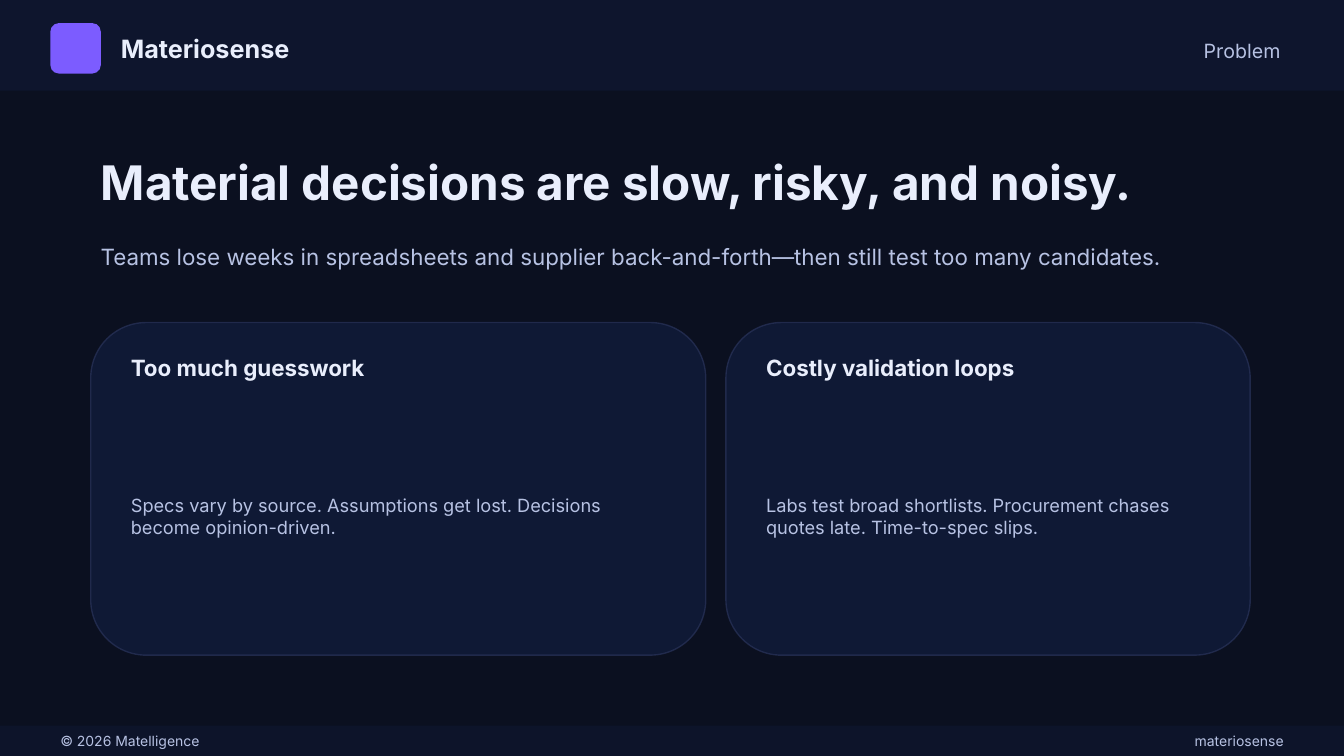
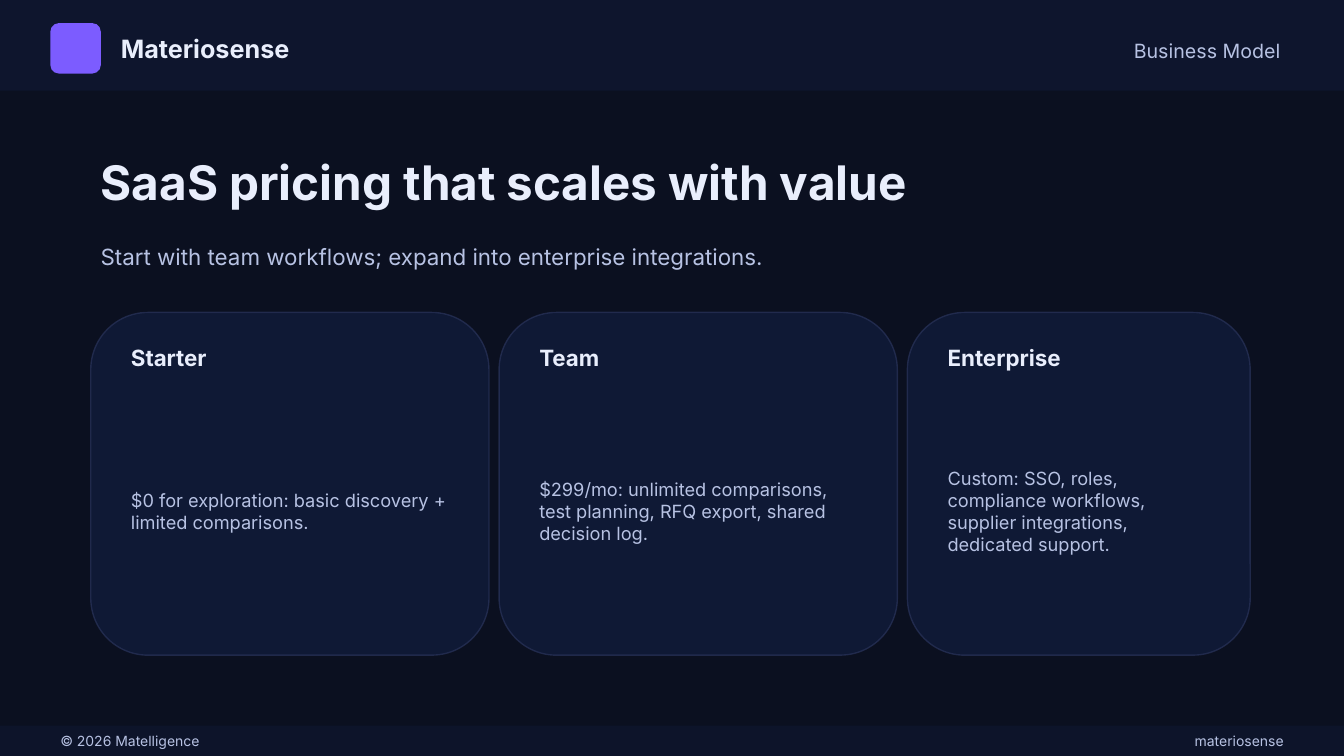
from dataclasses import dataclass

from pptx import Presentation
from pptx import util as u
from pptx.dml.color import RGBColor
from pptx.enum import shapes, text
from pptx.oxml import ns, xmlchemy

PX = u.Inches(0.01)
SLIDE_W, SLIDE_H = 1333, 750
HEADER_H, FOOTER_H = 90, 30
MARGIN = 90
CARD_BOTTOM, CARD_PAD = 650, 30
BRAND = "Materiosense"
TITLE_ONLY = 5

LEFT, RIGHT = text.PP_ALIGN.LEFT, text.PP_ALIGN.RIGHT
RECT = shapes.MSO_SHAPE.RECTANGLE
ROUNDED = shapes.MSO_SHAPE.ROUNDED_RECTANGLE


@dataclass(frozen=True)
class TextStyle:
    size: int
    color: str
    bold: bool = False


@dataclass(frozen=True)
class Theme:
    font: str = "Inter"
    background: str = "0B1020"
    band: str = "0F1730"
    badge: str = "7C5CFF"
    card: str = "101A38"
    card_edge: str = "2A345B"
    title: TextStyle = TextStyle(34, "E9EEFC", True)
    brand: TextStyle = TextStyle(18, "E9EEFC", True)
    section: TextStyle = TextStyle(14, "B7C2E3")
    lead: TextStyle = TextStyle(16, "B7C2E3")
    card_heading: TextStyle = TextStyle(16, "E9EEFC", True)
    card_body: TextStyle = TextStyle(13, "B7C2E3")
    footer: TextStyle = TextStyle(10, "B7C2E3")


THEME = Theme()


@dataclass(frozen=True)
class Box:
    left: int
    top: int
    width: int
    height: int

    def emu(self) -> tuple[int, ...]:
        return tuple(side * PX for side in (self.left, self.top, self.width, self.height))


@dataclass(frozen=True)
class Card:
    heading: str
    body: str
    width: int


@dataclass(frozen=True)
class Page:
    section: str
    title: str
    lead: str
    cards: tuple[Card, ...]
    cards_top: int
    gap: int


PAGES = (
    Page(
        "Problem",
        "Material decisions are slow, risky, and noisy.",
        "Teams lose weeks in spreadsheets and supplier back-and-forth—then still test "
        "too many candidates.",
        (
            Card("Too much guesswork",
                 "Specs vary by source. Assumptions get lost. Decisions become "
                 "opinion-driven.", 610),
            Card("Costly validation loops",
                 "Labs test broad shortlists. Procurement chases quotes late. "
                 "Time-to-spec slips.", 520),
        ),
        cards_top=320,
        gap=20,
    ),
    Page(
        "Business Model",
        "SaaS pricing that scales with value",
        "Start with team workflows; expand into enterprise integrations.",
        (
            Card("Starter",
                 "$0 for exploration: basic discovery + limited comparisons.", 395),
            Card("Team",
                 "$299/mo: unlimited comparisons, test planning, RFQ export, shared "
                 "decision log.", 395),
            Card("Enterprise",
                 "Custom: SSO, roles, compliance workflows, supplier integrations, "
                 "dedicated support.", 340),
        ),
        cards_top=310,
        gap=10,
    ),
)


def set_opacity(colored, percent: int) -> None:
    """Make the first solid colour inside an XML element partly transparent."""
    color = next(colored.iter(ns.qn("a:srgbClr")))
    alpha = xmlchemy.OxmlElement("a:alpha")
    alpha.set("val", str(percent * 1000))
    color.append(alpha)


def add_panel(slide, kind, box: Box, color: str, opacity: int = 100):
    """Add a filled shape without an outline or a shadow."""
    panel = slide.shapes.add_shape(kind, *box.emu())
    panel.shadow.inherit = False
    panel.fill.solid()
    panel.fill.fore_color.rgb = RGBColor.from_string(color)
    panel.line.fill.background()
    if opacity < 100:
        set_opacity(panel.element.spPr, opacity)
    return panel


def write(frame, words: str, style: TextStyle, align=LEFT) -> None:
    frame.text = words
    frame.word_wrap = True
    frame.auto_size = text.MSO_AUTO_SIZE.NONE
    frame.vertical_anchor = text.MSO_ANCHOR.MIDDLE
    paragraph = frame.paragraphs[0]
    paragraph.alignment = align
    font = paragraph.runs[0].font
    font.name = THEME.font
    font.size = u.Pt(style.size)
    font.bold = style.bold
    font.color.rgb = RGBColor.from_string(style.color)


def add_text(slide, box: Box, words: str, style: TextStyle, align=LEFT) -> None:
    write(slide.shapes.add_textbox(*box.emu()).text_frame, words, style, align)


def add_header(slide, section: str) -> None:
    add_panel(slide, RECT, Box(0, 0, SLIDE_W, HEADER_H), THEME.band, 85)
    add_panel(slide, ROUNDED, Box(50, 23, 50, 50), THEME.badge)
    add_text(slide, Box(110, 28, 600, 40), BRAND, THEME.brand)
    add_text(slide, Box(730, 30, 550, 40), section, THEME.section, RIGHT)


def add_footer(slide) -> None:
    top = SLIDE_H - FOOTER_H
    add_panel(slide, RECT, Box(0, top, SLIDE_W, FOOTER_H), THEME.band, 65)
    add_text(slide, Box(50, top, 600, FOOTER_H), "© 2026 Matelligence", THEME.footer)
    add_text(slide, Box(700, top, 583, FOOTER_H), BRAND.lower(), THEME.footer, RIGHT)


def add_title(slide, words: str) -> None:
    title = slide.shapes.title
    title.left, title.top, title.width, title.height = Box(MARGIN, 140, 1160, 80).emu()
    write(title.text_frame, words, THEME.title)


def add_card(slide, card: Card, left: int, top: int) -> None:
    height = CARD_BOTTOM - top
    panel = add_panel(slide, ROUNDED, Box(left, top, card.width, height), THEME.card, 90)
    panel.line.color.rgb = RGBColor.from_string(THEME.card_edge)
    panel.line.width = u.Pt(1)
    set_opacity(panel.element.spPr.find(ns.qn("a:ln")), 70)

    inner_left, inner_width = left + CARD_PAD, card.width - 2 * CARD_PAD
    add_text(slide, Box(inner_left, top + 25, inner_width, 40),
             card.heading, THEME.card_heading)
    add_text(slide, Box(inner_left, top + 72, inner_width, height - 90),
             card.body, THEME.card_body)


def add_page(deck, page: Page) -> None:
    slide = deck.slides.add_slide(deck.slide_layouts[TITLE_ONLY])
    add_header(slide, page.section)
    add_title(slide, page.title)
    add_text(slide, Box(MARGIN, 225, 1120, 60), page.lead, THEME.lead)
    left = MARGIN
    for card in page.cards:
        add_card(slide, card, left, page.cards_top)
        left += card.width + page.gap
    add_footer(slide)


def main() -> None:
    deck = Presentation()
    deck.slide_width, deck.slide_height = SLIDE_W * PX, SLIDE_H * PX
    backdrop = deck.slide_master.background.fill
    backdrop.solid()
    backdrop.fore_color.rgb = RGBColor.from_string(THEME.background)
    for page in PAGES:
        add_page(deck, page)
    deck.save("out.pptx")


if __name__ == "__main__":
    main()
